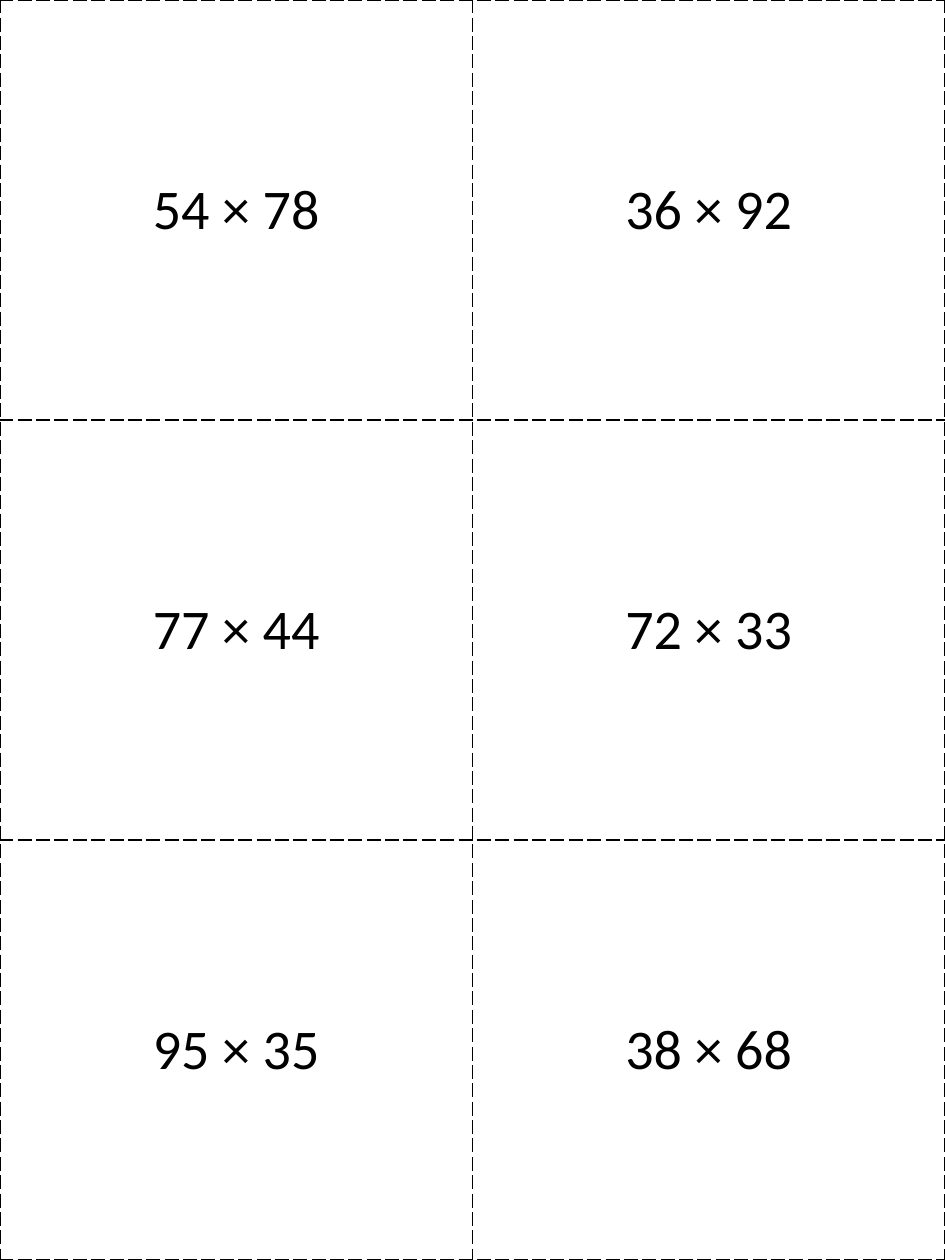
from pptx import Presentation
from pptx.dml.color import RGBColor
from pptx.enum.text import MSO_ANCHOR, PP_ALIGN
from pptx.oxml import parse_xml
from pptx.oxml.ns import nsdecls
from pptx.util import Inches, Pt

MIDDLE = MSO_ANCHOR.MIDDLE
CENTER = PP_ALIGN.CENTER
BLACK = RGBColor(0x00, 0x00, 0x00)
FONT = "Calibri"

CARDS = [
    ["54 × 78", "36 × 92"],
    ["77 × 44", "72 × 33"],
    ["95 × 35", "38 × 68"],
]


def add_border(cell):
    """Give all four sides of a cell a dashed cutting line."""
    props = cell._tc.get_or_add_tcPr()
    for pos, side in enumerate(("lnL", "lnR", "lnT", "lnB")):
        line = parse_xml(
            f'<a:{side} {nsdecls("a")} w="{Pt(1)}">'
            f'<a:solidFill><a:srgbClr val="{BLACK}"/></a:solidFill>'
            f'<a:prstDash val="lgDash"/></a:{side}>'
        )
        props.insert(pos, line)


def fill_card(cell, text):
    """Write one problem in the middle of a card."""
    cell.fill.background()
    cell.vertical_anchor = MIDDLE
    para = cell.text_frame.paragraphs[0]
    para.text = text
    para.alignment = CENTER
    para.font.name = FONT
    para.font.size = Pt(32)
    para.font.bold = False
    para.font.color.rgb = BLACK
    add_border(cell)


def add_cards(slide, left, top, width, height):
    """Place the grid of problem cards in the given box."""
    frame = slide.shapes.add_table(
        len(CARDS), len(CARDS[0]), left, top, width, height
    )
    table = frame.table
    table.first_row = False
    table.horz_banding = False
    for row, texts in enumerate(CARDS):
        for col, text in enumerate(texts):
            fill_card(table.cell(row, col), text)


def main():
    deck = Presentation()
    deck.slide_width = Inches(7.5)
    deck.slide_height = Inches(10)
    slide = deck.slides.add_slide(deck.slide_layouts[6])

    # Cards cover the whole page
    add_cards(slide, Inches(0), Inches(0), deck.slide_width, deck.slide_height)
    deck.save("out.pptx")


if __name__ == "__main__":
    main()
